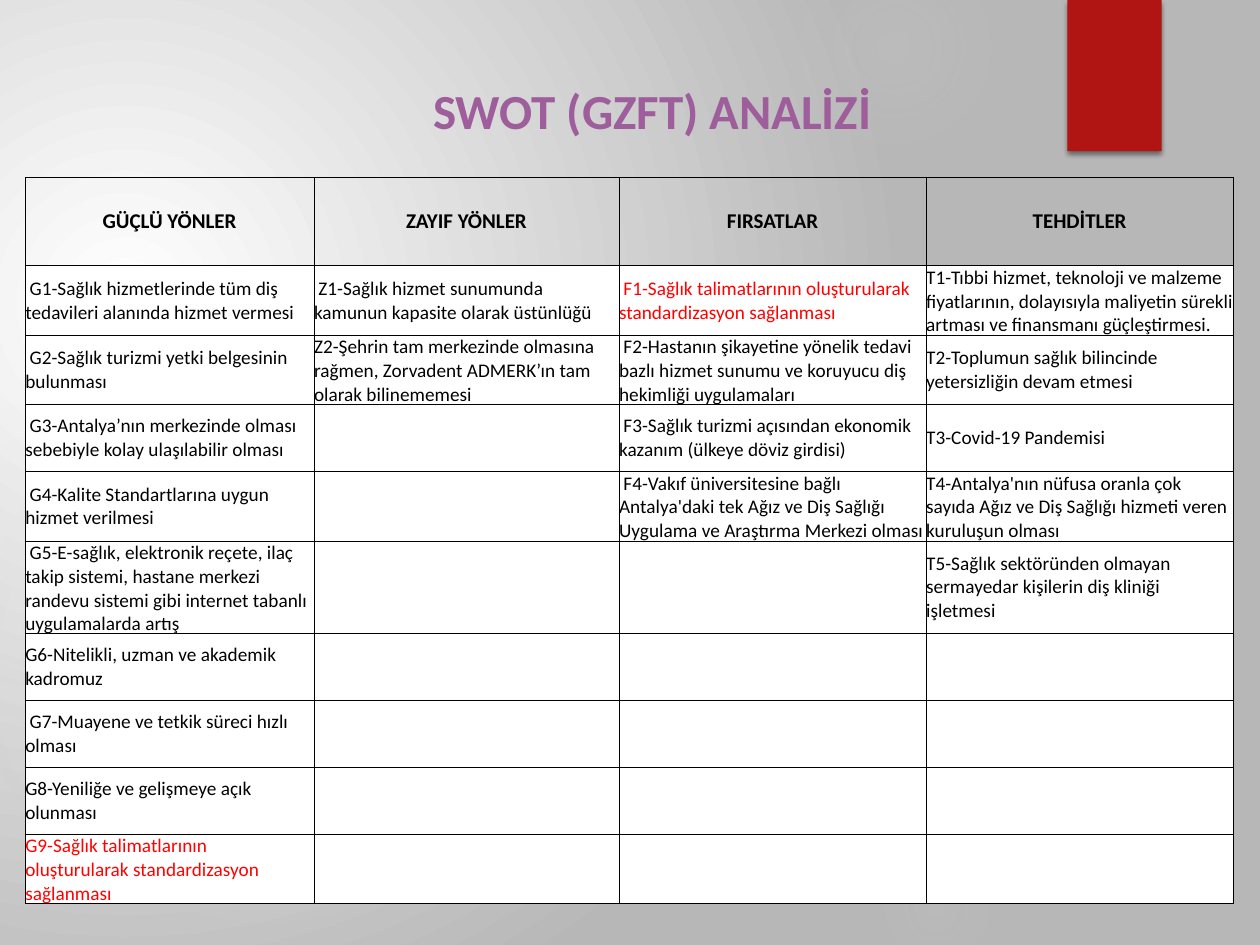
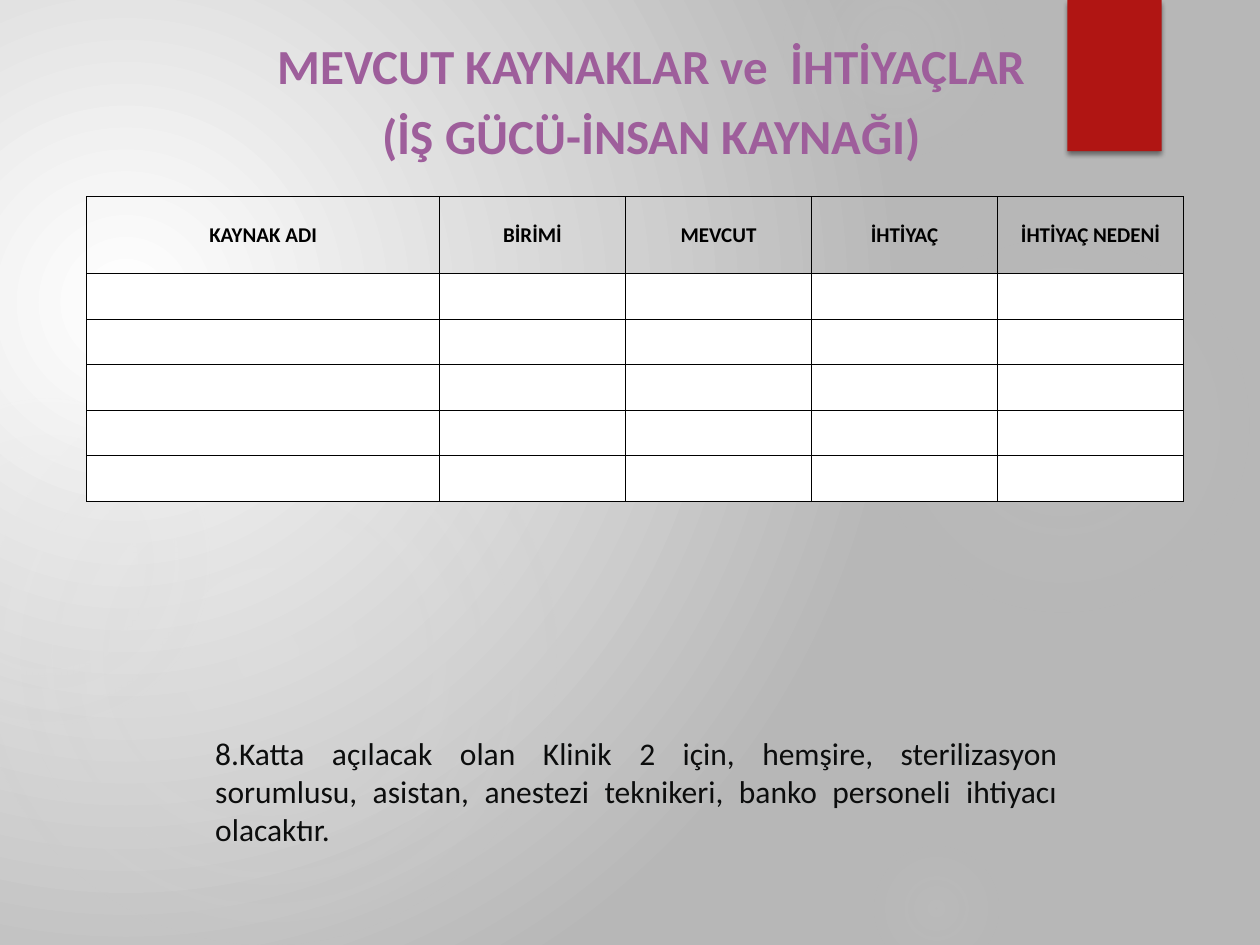
from dataclasses import dataclass
from itertools import zip_longest
from typing import NamedTuple, Optional

from pptx import Presentation
from pptx.dml.color import RGBColor
from pptx.enum.shapes import MSO_SHAPE as Shape
from pptx.enum.text import MSO_ANCHOR as Anchor, PP_ALIGN as Align
from pptx.oxml import parse_xml
from pptx.oxml.ns import nsdecls, qn
from pptx.util import Cm, Pt

FONT = "Calibri"
PURPLE = "9E5E9B"
RED = "FF0000"
RIBBON_RED = "B01513"
BLACK = "000000"
INK = "0C0D0D"
WHITE = "FFFFFF"
BACKDROP_GRAY = "B7B7B7"
GLOW_GRAY = "D9D9D9"


class Box(NamedTuple):
    left: float
    top: float
    width: float
    height: float

    def lengths(self) -> list:
        return [Cm(value) for value in self]


class Stop(NamedTuple):
    position: int
    color: str
    alpha: int = 100


class Glow(NamedTuple):
    left: float
    top: float
    diameter: float
    inner: int
    middle: int
    edge: int


class TextStyle(NamedTuple):
    size: float
    color: str
    bold: bool = False
    align: Align = Align.LEFT
    space_after: float = 0


@dataclass
class Column:
    heading: str
    width: float
    entries: tuple = ()


@dataclass
class Grid:
    left: float
    top: float
    header_height: float
    row_height: float
    row_count: int
    columns: list
    red_prefixes: tuple = ()


TITLE = TextStyle(28, PURPLE, True, Align.CENTER, 6)
HEADING = TextStyle(12, BLACK, True, Align.CENTER)
ENTRY = TextStyle(11, BLACK)
RED_ENTRY = ENTRY._replace(color=RED)
NOTE = TextStyle(18, INK, align=Align.JUSTIFY)

RIBBON = Box(21.52, 0, 1.9, 3.05)
GLOWS = [
    Glow(17.5, 4.66, 7.83, 7, 6, 69),
    Glow(15.8, -1.27, 4.45, 14, 7, 73),
    Glow(17.5, 16.94, 2.75, 9, 5, 66),
    Glow(-0.43, 7.41, 11.64, 11, 10, 75),
    Glow(-2.33, 8.04, 6.56, 8, 8, 72),
]

SWOT = Grid(0.51, 3.58, 1.78, 1.35, 9, [
    Column("GÜÇLÜ YÖNLER", 5.82, (
        " G1-Sağlık hizmetlerinde tüm diş tedavileri alanında hizmet vermesi",
        " G2-Sağlık turizmi yetki belgesinin bulunması",
        " G3-Antalya’nın merkezinde olması sebebiyle kolay ulaşılabilir olması",
        " G4-Kalite Standartlarına uygun hizmet verilmesi",
        " G5-E-sağlık, elektronik reçete, ilaç takip sistemi, hastane merkezi "
        "randevu sistemi gibi internet tabanlı uygulamalarda artış",
        "G6-Nitelikli, uzman ve akademik kadromuz ",
        " G7-Muayene ve tetkik süreci hızlı olması",
        "G8-Yeniliğe ve gelişmeye açık olunması ",
        "G9-Sağlık talimatlarının oluşturularak standardizasyon sağlanması ",
    )),
    Column("ZAYIF YÖNLER", 6.15, (
        " Z1-Sağlık hizmet sunumunda kamunun kapasite olarak üstünlüğü",
        "Z2-Şehrin tam merkezinde olmasına rağmen, Zorvadent ADMERK’ın tam "
        "olarak bilinememesi",
    )),
    Column("FIRSATLAR", 6.19, (
        " F1-Sağlık talimatlarının oluşturularak standardizasyon sağlanması",
        " F2-Hastanın şikayetine yönelik tedavi bazlı hizmet sunumu ve koruyucu "
        "diş hekimliği uygulamaları",
        " F3-Sağlık turizmi açısından ekonomik kazanım (ülkeye döviz girdisi)",
        " F4-Vakıf üniversitesine bağlı Antalya'daki tek Ağız ve Diş Sağlığı "
        "Uygulama ve Araştırma Merkezi olması",
    )),
    Column("TEHDİTLER", 6.19, (
        "T1-Tıbbi hizmet, teknoloji ve malzeme fiyatlarının, dolayısıyla "
        "maliyetin sürekli artması ve finansmanı güçleştirmesi.",
        "T2-Toplumun sağlık bilincinde yetersizliğin devam etmesi",
        "T3-Covid-19 Pandemisi",
        "T4-Antalya'nın nüfusa oranla çok sayıda Ağız ve Diş Sağlığı hizmeti "
        "veren kuruluşun olması",
        "T5-Sağlık sektöründen olmayan sermayedar kişilerin diş kliniği işletmesi",
    )),
], ("F1", "G9"))

RESOURCES = Grid(1.75, 3.96, 1.55, 0.92, 5, [
    Column("KAYNAK ADI", 7.11),
    *(Column(heading, 3.75)
      for heading in ("BİRİMİ", "MEVCUT", "İHTİYAÇ", "İHTİYAÇ NEDENİ")),
])


def rgb(color: str) -> RGBColor:
    return RGBColor.from_string(color)


def set_radial_gradient(owner, stops: list, focus: tuple) -> None:
    gradient = owner.find(".//" + qn("a:gradFill"))
    for child in list(gradient):
        gradient.remove(child)
    stop_list = "".join(
        f'<a:gs pos="{stop.position * 1000}"><a:srgbClr val="{stop.color}">'
        f'<a:alpha val="{stop.alpha * 1000}"/></a:srgbClr></a:gs>'
        for stop in stops)
    left, top, right, bottom = (value * 1000 for value in focus)
    gradient.append(parse_xml(
        f'<a:gsLst {nsdecls("a")}>{stop_list}</a:gsLst>'))
    gradient.append(parse_xml(
        f'<a:path {nsdecls("a")} path="circle"><a:fillToRect l="{left}" '
        f't="{top}" r="{right}" b="{bottom}"/></a:path>'))


def draw_shape(slide, kind: Shape, box: Box):
    shape = slide.shapes.add_shape(kind, *box.lengths())
    shape.shadow.inherit = False
    shape.line.fill.background()
    return shape


def draw_glow(slide, glow: Glow) -> None:
    shape = draw_shape(slide, Shape.OVAL, Box(
        glow.left, glow.top, glow.diameter, glow.diameter))
    shape.fill.gradient()
    set_radial_gradient(shape.element, [
        Stop(0, GLOW_GRAY, glow.inner),
        Stop(36, GLOW_GRAY, glow.middle),
        Stop(glow.edge, GLOW_GRAY, 0),
    ], (50, 50, 50, 50))


def draw_ribbon(slide) -> None:
    ribbon = draw_shape(slide, Shape.RECTANGLE, RIBBON)
    ribbon.fill.solid()
    ribbon.fill.fore_color.rgb = rgb(RIBBON_RED)
    ribbon.element.find(".//" + qn("a:effectLst")).append(parse_xml(
        f'<a:outerShdw {nsdecls("a")} blurRad="{Pt(3)}" dist="{Pt(2)}" '
        f'dir="5400000" rotWithShape="0"><a:srgbClr val="{BLACK}">'
        '<a:alpha val="45000"/></a:srgbClr></a:outerShdw>'))


def add_themed_slide(presentation):
    slide = presentation.slides.add_slide(presentation.slide_layouts[6])
    slide.background.fill.gradient()
    set_radial_gradient(slide.element, [
        Stop(0, WHITE), Stop(100, BACKDROP_GRAY)], (45, 65, 125, 100))
    for glow in GLOWS:
        draw_glow(slide, glow)
    draw_ribbon(slide)
    return slide


def write_text(text_frame, text: str, style: TextStyle) -> None:
    text_frame.text = text
    for paragraph in text_frame.paragraphs:
        paragraph.alignment = style.align
        paragraph.space_after = Pt(style.space_after)
        paragraph.font.name = FONT
        paragraph.font.size = Pt(style.size)
        paragraph.font.bold = style.bold
        paragraph.font.color.rgb = rgb(style.color)


def draw_text(slide, box: Box, text: str, style: TextStyle,
              anchor: Anchor = Anchor.TOP) -> None:
    text_frame = slide.shapes.add_textbox(*box.lengths()).text_frame
    text_frame.word_wrap = True
    text_frame.vertical_anchor = anchor
    write_text(text_frame, text, style)


def format_cell(cell, text: str, style: TextStyle, fill: Optional[str]) -> None:
    cell.margin_left = cell.margin_right = 0
    cell.margin_top = cell.margin_bottom = 0
    cell.vertical_anchor = Anchor.MIDDLE
    write_text(cell.text_frame, text, style)
    if fill:
        cell.fill.solid()
        cell.fill.fore_color.rgb = rgb(fill)
    else:
        cell.fill.background()
    properties = cell._tc.get_or_add_tcPr()
    for index, side in enumerate("LRTB"):
        properties.insert(index, parse_xml(
            f'<a:ln{side} {nsdecls("a")} w="{Pt(0.5)}"><a:solidFill>'
            f'<a:srgbClr val="{BLACK}"/></a:solidFill></a:ln{side}>'))


def draw_grid(slide, grid: Grid) -> None:
    heights = [grid.header_height] + [grid.row_height] * grid.row_count
    box = Box(grid.left, grid.top,
              sum(column.width for column in grid.columns), sum(heights))
    table = slide.shapes.add_table(
        len(heights), len(grid.columns), *box.lengths()).table
    table.horz_banding = False
    for row, height in zip(table.rows, heights):
        row.height = Cm(height)
    for index, column in enumerate(grid.columns):
        table.columns[index].width = Cm(column.width)
        format_cell(table.cell(0, index), column.heading, HEADING, None)
        entries = zip_longest(
            range(1, len(heights)), column.entries, fillvalue="")
        for row_index, entry in entries:
            is_red = entry.strip().startswith(grid.red_prefixes)
            format_cell(table.cell(row_index, index), entry,
                        RED_ENTRY if is_red else ENTRY, WHITE)


def main() -> None:
    presentation = Presentation()
    presentation.slide_width = Cm(25.4)
    presentation.slide_height = Cm(19.05)

    swot_slide = add_themed_slide(presentation)
    draw_text(swot_slide, Box(7.03, 1.5, 12.24, 1.45),
              "SWOT (GZFT) ANALİZİ", TITLE)
    draw_grid(swot_slide, SWOT)

    resource_slide = add_themed_slide(presentation)
    draw_text(resource_slide, Box(4.98, 0.43, 16.31, 3),
              "MEVCUT KAYNAKLAR ve  İHTİYAÇLAR\n(İŞ GÜCÜ-İNSAN KAYNAĞI)",
              TITLE, Anchor.BOTTOM)
    draw_grid(resource_slide, RESOURCES)
    draw_text(resource_slide, Box(4.09, 14.68, 17.48, 2.57),
              "8.Katta açılacak olan Klinik 2 için, hemşire, sterilizasyon "
              "sorumlusu, asistan, anestezi teknikeri, banko personeli ihtiyacı "
              "olacaktır.", NOTE)

    presentation.save("out.pptx")


if __name__ == "__main__":
    main()
